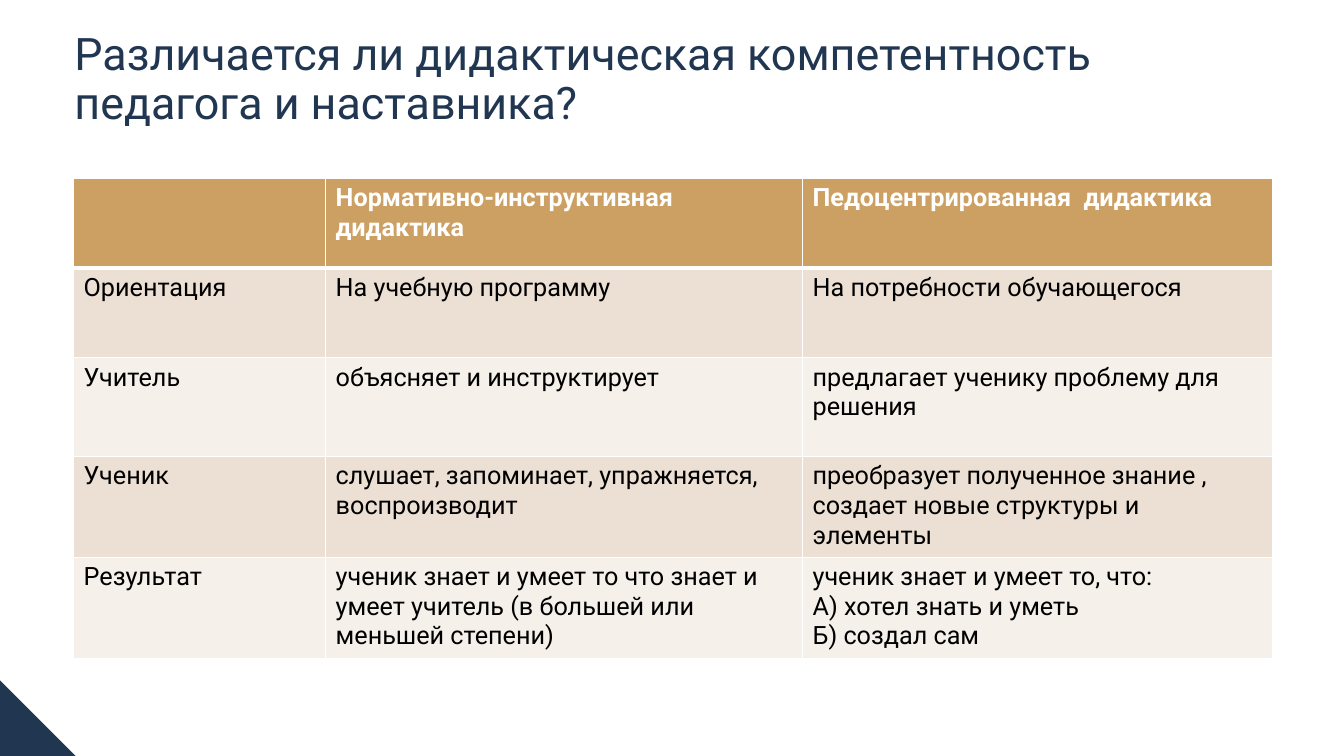
from dataclasses import dataclass

from lxml import etree
from pptx import Presentation
from pptx.dml.color import RGBColor
from pptx.enum.shapes import MSO_SHAPE
from pptx.enum.text import MSO_ANCHOR
from pptx.oxml.ns import qn
from pptx.util import Inches, Pt

TRIANGLE = MSO_SHAPE.RIGHT_TRIANGLE
MIDDLE = MSO_ANCHOR.MIDDLE


@dataclass(frozen=True)
class Theme:
    font: str = "Roboto"
    navy: str = "203651"
    header: str = "CC9F62"
    bands: tuple = ("ECDFD3", "F6F0EA")
    white: str = "FFFFFF"
    black: str = "000000"
    title_size: int = 32
    cell_size: int = 18
    thin: int = 1
    thick: int = 3


class SlideBuilder:
    def __init__(self, slide, theme):
        self.s = slide
        self.theme = theme

    def add_text(self, tf, text, size, color, bold=False, line_spacing=None):
        for i, line in enumerate(text.split("\n")):
            p = tf.paragraphs[0] if i == 0 else tf.add_paragraph()
            p.line_spacing = line_spacing
            r = p.add_run()
            r.text = line
            fmt = {"name": self.theme.font, "size": Pt(size), "bold": bold}
            for key, value in fmt.items():
                setattr(r.font, key, value)
            r.font.color.rgb = RGBColor.from_string(color)

    def title(self, text, *box):
        sp = self.s.shapes.add_textbox(*map(Inches, box))
        tf = sp.text_frame
        for key, value in {"word_wrap": True, "vertical_anchor": MIDDLE}.items():
            setattr(tf, key, value)
        self.add_text(tf, text, self.theme.title_size, self.theme.navy, line_spacing=0.9)

    def corner(self, *box):
        sp = self.s.shapes.add_shape(TRIANGLE, *map(Inches, box))
        sp.shadow.inherit = False
        sp.fill.solid()
        sp.fill.fore_color.rgb = RGBColor.from_string(self.theme.navy)
        sp.line.fill.background()

    def borders(self, cell, top, bottom):
        tc_pr = cell._tc.get_or_add_tcPr()
        thin = self.theme.thin
        for side, width in {"L": thin, "R": thin, "T": top, "B": bottom}.items():
            ln = etree.SubElement(tc_pr, qn(f"a:ln{side}"), w=str(Pt(width)))
            fill = etree.SubElement(ln, qn("a:solidFill"))
            etree.SubElement(fill, qn("a:srgbClr"), val=self.theme.white)

    def table(self, rows, left, top, widths, heights):
        th = self.theme
        frame = self.s.shapes.add_table(
            len(rows), len(widths), Inches(left), Inches(top),
            Inches(sum(widths)), Inches(sum(heights)))
        tbl = frame.table
        for col, width in zip(tbl.columns, widths):
            col.width = Inches(width)
        for i, (row, height) in enumerate(zip(rows, heights)):
            tbl.rows[i].height = Inches(height)
            is_header = i == 0
            fill = th.header if is_header else th.bands[(i - 1) % 2]
            color = th.white if is_header else th.black
            for j, text in enumerate(row):
                cell = tbl.cell(i, j)
                self.borders(cell, th.thick if i == 1 else th.thin,
                             th.thick if is_header else th.thin)
                cell.fill.solid()
                cell.fill.fore_color.rgb = RGBColor.from_string(fill)
                if text:
                    self.add_text(cell.text_frame, text, th.cell_size, color, is_header)


ROWS = [
    ("", "Нормативно-инструктивная дидактика", "Педоцентрированная  дидактика"),
    ("Ориентация", "На учебную программу", "На потребности обучающегося"),
    ("Учитель", "объясняет и инструктирует", "предлагает ученику проблему для решения"),
    ("Ученик", "слушает, запоминает, упражняется, воспроизводит",
     "преобразует полученное знание , создает новые структуры и элементы"),
    ("Результат",
     "ученик знает и умеет то что знает и умеет учитель (в большей или меньшей степени)",
     "ученик знает и умеет то, что:\nА) хотел знать и уметь\nБ) создал сам"),
]


def main():
    prs = Presentation()
    prs.slide_width, prs.slide_height = Inches(13.33), Inches(7.5)
    builder = SlideBuilder(prs.slides.add_slide(prs.slide_layouts[6]), Theme())
    builder.corner(-0.05, 6.7, 0.8, 0.8)
    builder.title("Различается ли дидактическая компетентность педагога и наставника?",
                  0.64, 0.32, 10.58, 0.96)
    builder.table(ROWS, 0.73, 1.77, (2.5, 4.73, 4.66), [0.89] * 2 + [0.98] * 3)
    prs.save("out.pptx")


if __name__ == "__main__":
    main()
